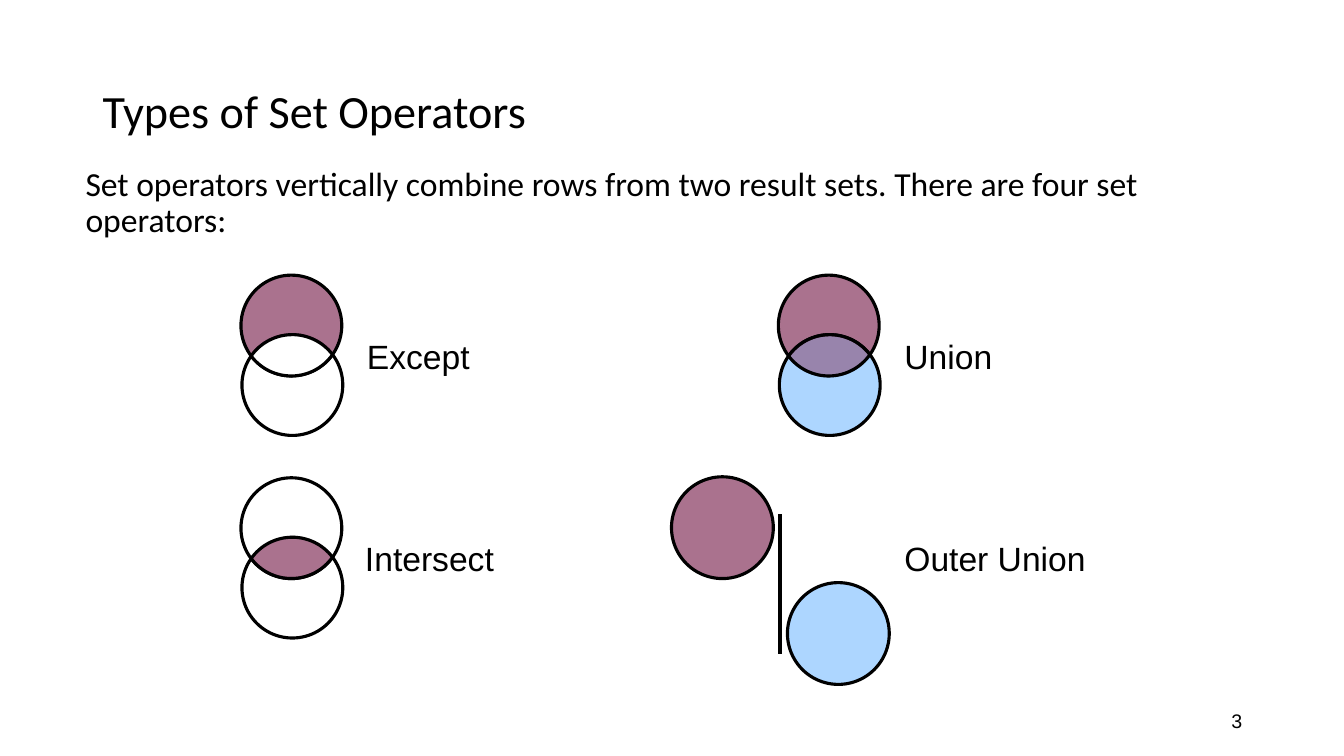
from dataclasses import dataclass
from math import acos, atan2, cos, hypot, pi, sin
from typing import NamedTuple, Optional

from lxml.etree import SubElement
from pptx import Presentation
from pptx.dml.color import RGBColor
from pptx.enum.shapes import MSO_CONNECTOR as Connector, MSO_SHAPE as Preset
from pptx.enum.text import MSO_ANCHOR as Anchor, MSO_AUTO_SIZE as AutoSize, PP_ALIGN as Align
from pptx.oxml.ns import qn
from pptx.util import Inches, Pt

COLORS = {"ink": "000000", "paper": "FFFFFF", "plum": "954F72", "sky": "99CCFF"}
LENS_STEPS = 32  # segments per arc


class Paint(NamedTuple):
    color: str
    alpha: int = 100


WHITE, SHEER_WHITE = Paint("paper"), Paint("paper", 80)
PLUM, PALE_PLUM, SKY = Paint("plum", 80), Paint("plum", 50), Paint("sky", 80)


class Disc(NamedTuple):
    left: float
    top: float
    paint: Paint
    size: float = 1.0

    @property
    def center(self) -> tuple[float, float]:
        return self.left + self.size / 2, self.top + self.size / 2


@dataclass
class Diagram:
    discs: tuple[Disc, Disc]  # back to front
    lens: Optional[Paint] = None
    divider: Optional[tuple[float, float, float, float]] = None


@dataclass
class Label:
    text: str
    left: float
    top: float
    width: float
    height: float
    size: float
    font: str
    frame_format: dict
    paragraph_format: dict


NO_WRAP = {"margin_left": 0, "margin_right": 0, "margin_top": 0, "margin_bottom": 0,
           "word_wrap": False, "auto_size": AutoSize.SHAPE_TO_FIT_TEXT}
WRAP = {"word_wrap": True}
MIDDLE = {"word_wrap": True, "vertical_anchor": Anchor.MIDDLE}

LABELS = [
    Label("Types of Set Operators", 0.92, 0.4, 11.5, 1.45, 33, "Calibri",
          MIDDLE, {"line_spacing": 0.9}),
    Label("Set operators vertically combine rows from two result sets. "
          "There are four set operators:", 0.75, 1.61, 11.5, 4.76, 24, "Calibri",
          WRAP, {"line_spacing": 0.9, "space_before": Pt(7.5)}),
    Label("3", 9.42, 6.95, 3, 0.4, 14, "Arial", MIDDLE, {"alignment": Align.RIGHT}),
] + [
    Label(name, left, top, width, 0.4, 24, "Arial", NO_WRAP, {})
    for name, left, top, width in [
        ("Except", 3.64, 3.33, 1.03), ("Intersect", 3.62, 5.34, 1.29),
        ("Union", 8.97, 3.33, 0.88), ("Outer Union", 8.97, 5.34, 1.82)]
]

DIAGRAMS = [
    # Except
    Diagram((Disc(2.4, 3.32, WHITE), Disc(2.39, 2.73, PLUM)), lens=WHITE),
    # Intersect
    Diagram((Disc(2.4, 5.33, WHITE), Disc(2.39, 4.74, SHEER_WHITE)), lens=PLUM),
    # Union
    Diagram((Disc(7.72, 2.73, PLUM), Disc(7.73, 3.32, SKY)), lens=PALE_PLUM),
    # Outer Union
    Diagram((Disc(7.81, 5.78, SKY, 1.01), Disc(6.66, 4.73, PLUM, 1.01)),
            divider=(7.74, 5.1, 7.74, 6.49)),
]


def rgb(name: str) -> RGBColor:
    return RGBColor.from_string(COLORS[name])


def set_attributes(target, values: dict) -> None:
    for name, value in values.items():
        setattr(target, name, value)


def paint_shape(shape, paint: Paint) -> None:
    shape.shadow.inherit = False
    shape.fill.solid()
    shape.fill.fore_color.rgb = rgb(paint.color)
    if paint.alpha < 100:
        color = shape.fill._xPr.find(qn("a:solidFill"))[0]
        SubElement(color, qn("a:alpha"), val=str(paint.alpha * 1000))
    shape.line.color.rgb = rgb("ink")
    shape.line.width = Pt(2.25)


def add_disc(shapes, disc: Disc) -> None:
    size = Inches(disc.size)
    shape = shapes.add_shape(Preset.OVAL, Inches(disc.left), Inches(disc.top), size, size)
    paint_shape(shape, disc.paint)


def lens_points(first: Disc, second: Disc) -> list[tuple[int, int]]:
    """Outline of the overlap of two discs of equal size."""
    radius = first.size / 2
    points = []
    for disc, other in ((first, second), (second, first)):
        x, y = disc.center
        dx, dy = other.center[0] - x, other.center[1] - y
        half_angle = acos(hypot(dx, dy) / 2 / radius)
        for step in range(LENS_STEPS):
            angle = atan2(dy, dx) + half_angle * (2 * step / LENS_STEPS - 1)
            points.append((Inches(x + radius * cos(angle)), Inches(y + radius * sin(angle))))
    return points


def add_lens(shapes, discs: tuple[Disc, Disc], paint: Paint) -> None:
    start, *others = lens_points(*discs)
    builder = shapes.build_freeform(*start)
    builder.add_line_segments(others, close=True)
    paint_shape(builder.convert_to_shape(), paint)


def add_divider(shapes, ends: tuple[float, float, float, float]) -> None:
    line = shapes.add_connector(Connector.STRAIGHT, *map(Inches, ends))
    line.line.color.rgb = rgb("ink")
    line.line.width = Pt(3)
    SubElement(line._element.spPr, qn("a:effectLst"))


def add_diagram(slide, diagram: Diagram) -> None:
    shapes = slide.shapes.add_group_shape().shapes
    if diagram.divider:
        add_divider(shapes, diagram.divider)
    for disc in diagram.discs:
        add_disc(shapes, disc)
    if diagram.lens:
        add_lens(shapes, diagram.discs, diagram.lens)


def add_label(slide, label: Label) -> None:
    box = slide.shapes.add_textbox(
        *map(Inches, (label.left, label.top, label.width, label.height)))
    set_attributes(box.text_frame, label.frame_format)
    paragraph = box.text_frame.paragraphs[0]
    set_attributes(paragraph, label.paragraph_format)
    run = paragraph.add_run()
    run.text = label.text
    set_attributes(run.font, {"name": label.font, "size": Pt(label.size)})
    run.font.color.rgb = rgb("ink")


def main() -> None:
    presentation = Presentation()
    presentation.slide_width, presentation.slide_height = Inches(13.33), Inches(7.5)
    slide = presentation.slides.add_slide(presentation.slide_layouts[6])

    # Title, introduction, page number and operator names
    for label in LABELS:
        add_label(slide, label)

    # Set diagrams
    for diagram in DIAGRAMS:
        add_diagram(slide, diagram)

    presentation.save("out.pptx")


if __name__ == "__main__":
    main()
